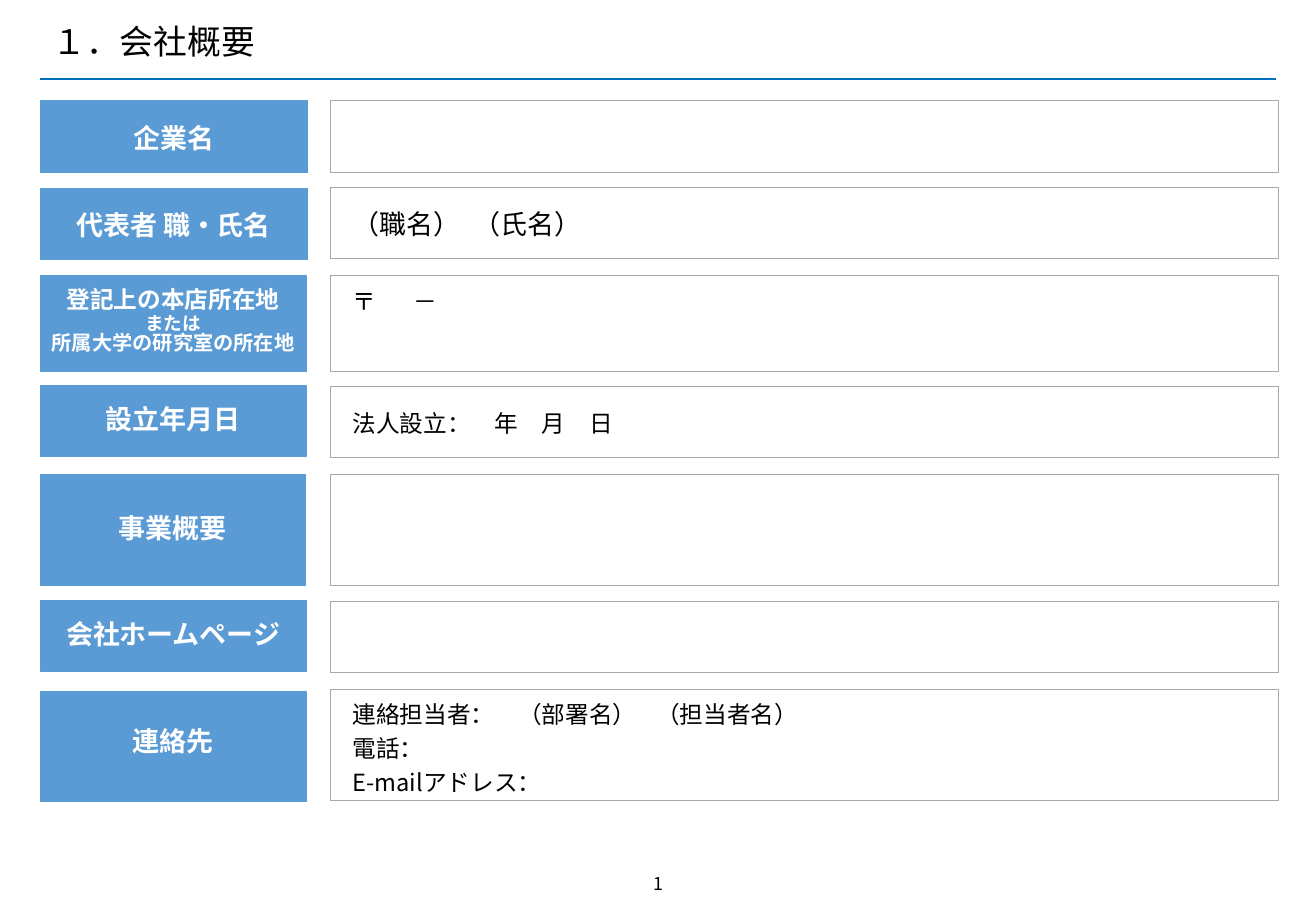
from lxml import etree
from pptx import Presentation, util as u
from pptx.dml.color import RGBColor
from pptx.enum import shapes, text
from pptx.oxml import ns

PX = 9144  # 100 px to the inch
COLORS = {
    "ink": "000000",
    "paper": "FFFFFF",
    "label": "5B9BD5",
    "border": "A7A8AA",
    "rule": "0070C0",
}
LABEL_LEFT, FIELD_LEFT, FIELD_WIDTH = 33, 272, 780
LABEL_WIDTH = 219

# Each row: field top, field height, label shift, label width,
# label lines, label spacing, field lines, field spacing, tab stop.
# A line is (text, size).
ROWS = [
    (83, 59, 0, 220, [("企業名", 16)], 1.06, [], 1.06, None),
    (154, 59, 1, 220, [("代表者 職・氏名", 16)], 1.06,
     [("（職名）\t（氏名）", 16)], 1.06, 321),
    (227, 79, 0, LABEL_WIDTH,
     [("登記上の本店所在地", 14), ("または", 11), ("所属大学の研究室の所在地", 12)],
     u.Pt(12), [("〒\t－", 14)], 1.06, 88),
    (318, 59, -1, LABEL_WIDTH, [("設立年月日", 16)], u.Pt(16),
     [("法人設立：　年　月　日", 14)], 1.06, None),
    (391, 91, 0, 218, [("事業概要", 16)], u.Pt(16), [], 1.06, None),
    (495, 59, -1, LABEL_WIDTH, [("会社ホームページ", 16)], u.Pt(16), [], 1.06, None),
    (568, 91, 1, LABEL_WIDTH, [("連絡先", 16)], u.Pt(12),
     [("連絡担当者：　（部署名）\t（担当者名）", 14), ("電話：", 14),
      ("E-mailアドレス：", 14)], u.Pt(20), 496),
]


class Sheet:
    font = "Noto Sans CJK JP"
    inset = 8

    def __init__(self, deck):
        self.slide = deck.slides.add_slide(deck.slide_layouts[5])

    def color(self, name):
        return RGBColor.from_string(COLORS[name])

    def words(self, paragraph, content, size, color, bold=False):
        run = paragraph.add_run()
        run.text = content
        run.font.size = u.Pt(size)
        run.font.bold = bold
        run.font.name = self.font
        run.font.color.rgb = self.color(color)
        east_asian = etree.SubElement(run.font._element, ns.qn("a:ea"))
        east_asian.set("typeface", self.font)
        return run

    def title(self, content, left, top, width, height):
        heading = self.slide.shapes.title
        heading.left, heading.top = left * PX, top * PX
        heading.width, heading.height = width * PX, height * PX
        frame = heading.text_frame
        frame.auto_size = text.MSO_AUTO_SIZE.NONE
        frame.vertical_anchor = text.MSO_ANCHOR.MIDDLE
        paragraph = frame.paragraphs[0]
        paragraph.alignment = text.PP_ALIGN.LEFT
        paragraph.line_spacing = 0.9
        self.words(paragraph, content, 20, "ink")

    def rule(self, left, right, y):
        line = self.slide.shapes.add_connector(
            shapes.MSO_CONNECTOR.STRAIGHT, left * PX, y * PX, right * PX, y * PX)
        line.line.color.rgb = self.color("rule")
        line.line.width = u.Pt(1)
        etree.SubElement(line._element.spPr, ns.qn("a:effectLst"))

    def box(self, left, top, width, height, fill, border):
        rect = self.slide.shapes.add_shape(
            shapes.MSO_SHAPE.RECTANGLE,
            left * PX, top * PX, width * PX, height * PX)
        rect.shadow.inherit = False
        rect.fill.solid()
        rect.fill.fore_color.rgb = self.color(fill)
        rect.line.color.rgb = self.color(border)
        rect.line.width = u.Pt(0.5)
        frame = rect.text_frame
        frame.word_wrap = True
        frame.vertical_anchor = text.MSO_ANCHOR.MIDDLE
        frame.margin_left = frame.margin_right = self.inset * PX
        frame.margin_top = frame.margin_bottom = self.inset * PX
        return frame

    def lines(self, frame, lines, spacing, align):
        for index, (content, size) in enumerate(lines):
            paragraph = frame.add_paragraph() if index else frame.paragraphs[0]
            paragraph.alignment = align
            paragraph.line_spacing = spacing
            yield paragraph, content, size

    def label(self, left, top, width, height, lines, spacing):
        frame = self.box(left, top, width, height, "label", "label")
        for paragraph, content, size in self.lines(
                frame, lines, spacing, text.PP_ALIGN.CENTER):
            if spacing == 1.06:
                paragraph.space_before = u.Pt(6)
            self.words(paragraph, content, size, "paper", bold=True)

    def field(self, left, top, width, height, lines, spacing, tab, anchor):
        frame = self.box(left, top, width, height, "paper", "border")
        frame.vertical_anchor = anchor
        for paragraph, content, size in self.lines(
                frame, lines, spacing, text.PP_ALIGN.LEFT):
            props = paragraph._p.get_or_add_pPr()
            props.set("marL", str(10 * PX))
            props.set("indent", "0")
            if "\t" in content:
                stops = etree.SubElement(props, ns.qn("a:tabLst"))
                etree.SubElement(stops, ns.qn("a:tab"), pos=str(tab * PX), algn="l")
            self.words(paragraph, content, size, "ink")

    def page_number(self, left, top, width, height):
        holder = self.slide.shapes.add_textbox(
            left * PX, top * PX, width * PX, height * PX)
        holder.text_frame.word_wrap = True
        paragraph = holder.text_frame.paragraphs[0]
        paragraph.alignment = text.PP_ALIGN.CENTER
        number = self.words(paragraph, "1", 10.5, "ink")._r
        # Turn the run into a slide number field
        number.tag = ns.qn("a:fld")
        number.set("id", "{B6F15528-21DE-4FAA-801E-634DDDAF4B2B}")
        number.set("type", "slidenum")


def main():
    deck = Presentation()
    deck.slide_width, deck.slide_height = 1083 * PX, 750 * PX
    sheet = Sheet(deck)

    # Heading
    sheet.title("１．会社概要", 33, 15, 934, 42)
    sheet.rule(33, 1050, 65)

    # Form rows
    for (top, height, shift, label_width, label, label_spacing,
         entry, entry_spacing, tab) in ROWS:
        sheet.label(LABEL_LEFT, top + shift, label_width, height, label, label_spacing)
        is_address = len(label) > 1
        anchor = text.MSO_ANCHOR.TOP if is_address else text.MSO_ANCHOR.MIDDLE
        sheet.field(FIELD_LEFT, top, FIELD_WIDTH, height,
                    entry, entry_spacing, tab, anchor)

    # Footer
    sheet.page_number(499, 714, 86, 29)
    deck.save("out.pptx")


if __name__ == "__main__":
    main()
